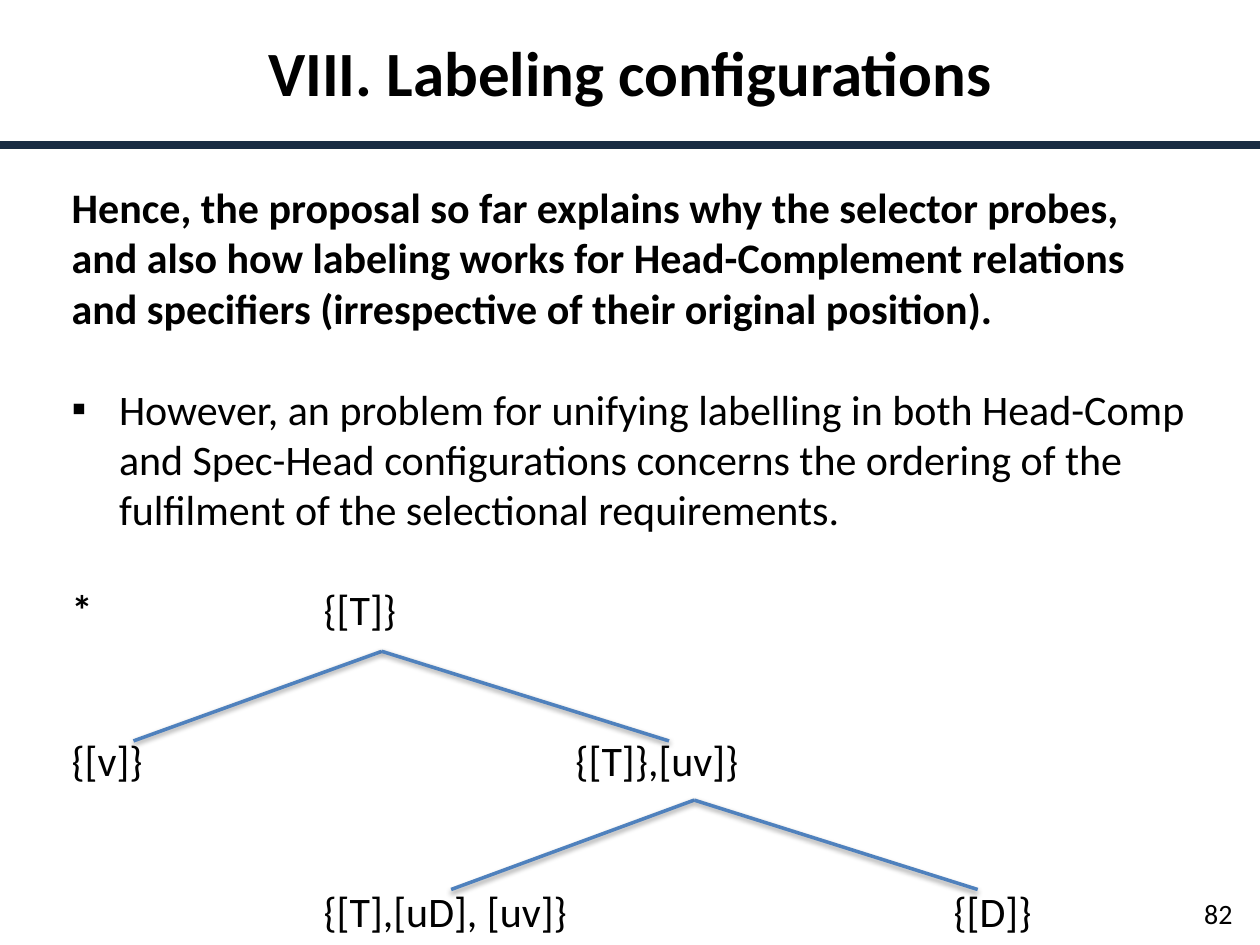
from lxml import etree
from pptx import Presentation
from pptx.dml.color import RGBColor
from pptx.enum.shapes import MSO_CONNECTOR
from pptx.enum.text import MSO_ANCHOR, MSO_AUTO_SIZE, PP_ALIGN
from pptx.oxml.ns import qn
from pptx.util import Pt

STRAIGHT = MSO_CONNECTOR.STRAIGHT
MIDDLE, TOP = MSO_ANCHOR.MIDDLE, MSO_ANCHOR.TOP
NO_FIT = MSO_AUTO_SIZE.NONE
LEFT, CENTER, RIGHT = PP_ALIGN.LEFT, PP_ALIGN.CENTER, PP_ALIGN.RIGHT

FONT = "Calibri"
COLORS = {"text": "000000", "rule": "192C43", "branch": "4F81BD", "shadow": "000000"}
BODY_SIZE = 24
BODY_LEFT = 33.8
LINE_GAP = 28.8  # height of one body line
HANG = 27

# Body paragraphs: text, bold, lines of space above, bullet
BODY = [
    ("Hence, the proposal so far explains why the selector probes, and also how "
     "labeling works for Head-Complement relations and specifiers (irrespective "
     "of their original position).", True, 0, None),
    ("However, an problem for unifying labelling in both Head-Comp and Spec-Head "
     "configurations concerns the ordering of the fulfilment of the selectional "
     "requirements.", False, 1, "▪"),
]

# Tree labels: text, bold, column, row, width
TREE_TOP, COLUMN_STEP, ROW_STEP = 329.8, 72, 86.4
LABELS = [
    ("*", True, 0, 0, 40),
    ("{[T]}", False, 2, 0, 70),
    ("{[v]}", False, 0, 1, 70),
    ("{[T]},[uv]}", False, 4, 1, 130),
    ("{[T],[uD], [uv]}", False, 2, 2, 170),
    ("{[D]}", False, 7, 2, 70),
]

# Tree branches: apex, then the two lower ends
BRANCHES = [
    ((218.2, 372.2), [(76.3, 423.4), (382.3, 423.4)]),
    ((396.7, 457.2), [(257.8, 508.3), (558.7, 508.3)]),
]


def place(shape, left, top, width, height):
    shape.left, shape.top = Pt(left), Pt(top)
    shape.width, shape.height = Pt(width), Pt(height)


def setup_frame(shape, anchor):
    frame = shape.text_frame
    frame.word_wrap = True
    frame.auto_size = NO_FIT
    frame.vertical_anchor = anchor
    return frame


def add_span(para, text, size, bold):
    span = para.add_run()
    span.text = text
    span.font.name = FONT
    span.font.size = Pt(size)
    span.font.bold = bold
    span.font.color.rgb = RGBColor.from_string(COLORS["text"])


def set_bullet(para, bullet):
    props = para._p.get_or_add_pPr()
    indent = Pt(HANG) if bullet else 0
    props.set("marL", str(indent))
    props.set("indent", str(-indent))
    if bullet:
        etree.SubElement(props, qn("a:buChar"), char=bullet)
    else:
        etree.SubElement(props, qn("a:buNone"))


def fill_body(box):
    place(box, BODY_LEFT, 100.1, 652.3, 216)
    frame = setup_frame(box, TOP)
    for index, (text, bold, gap, bullet) in enumerate(BODY):
        para = frame.add_paragraph() if index else frame.paragraphs[0]
        para.alignment = LEFT
        para.space_before = Pt(gap * LINE_GAP)
        para.space_after = Pt(0)
        set_bullet(para, bullet)
        add_span(para, text, BODY_SIZE, bold)


def fill_line(box, text, size, align, anchor, bold=False):
    para = setup_frame(box, anchor).paragraphs[0]
    para.alignment = align
    add_span(para, text, size, bold)


def add_text(page, left, top, width, height, *content):
    box = page.shapes.add_textbox(Pt(left), Pt(top), Pt(width), Pt(height))
    fill_line(box, *content)


def add_line(page, start, end, color, width, shadow=False):
    line = page.shapes.add_connector(STRAIGHT, *(Pt(value) for value in (*start, *end)))
    line.line.color.rgb = RGBColor.from_string(COLORS[color])
    line.line.width = Pt(width)
    effects = etree.SubElement(line._element.spPr, qn("a:effectLst"))
    if shadow:
        outer = etree.SubElement(effects, qn("a:outerShdw"), blurRad=str(Pt(3.1)),
                                 dist=str(Pt(1.6)), dir="5400000", rotWithShape="0")
        tone = etree.SubElement(outer, qn("a:srgbClr"), val=COLORS["shadow"])
        etree.SubElement(tone, qn("a:alpha"), val="38000")


def main():
    deck = Presentation()
    deck.slide_width, deck.slide_height = Pt(720), Pt(540)
    page = deck.slides.add_slide(deck.slide_layouts[1])

    # Heading and the rule below it
    title = page.shapes.title
    place(title, 5.8, 15.1, 708.5, 51.1)
    fill_line(title, "VIII. Labeling configurations", 36, CENTER, MIDDLE, True)
    add_line(page, (0, 82.8), (720, 82.8), "rule", 4.5)

    # Argument
    fill_body(page.placeholders[1])

    # Tree labels on a grid of columns and rows
    for text, bold, column, row, width in LABELS:
        add_text(page, BODY_LEFT + column * COLUMN_STEP, TREE_TOP + row * ROW_STEP,
                 width, 36.4, text, BODY_SIZE, LEFT, TOP, bold)

    # Tree branches
    for apex, ends in BRANCHES:
        for end in ends:
            add_line(page, apex, end, "branch", 2, shadow=True)

    # Page number
    add_text(page, 665.3, 507.6, 46.1, 28.8, "82", 16, RIGHT, MIDDLE)

    deck.save("out.pptx")


if __name__ == "__main__":
    main()
